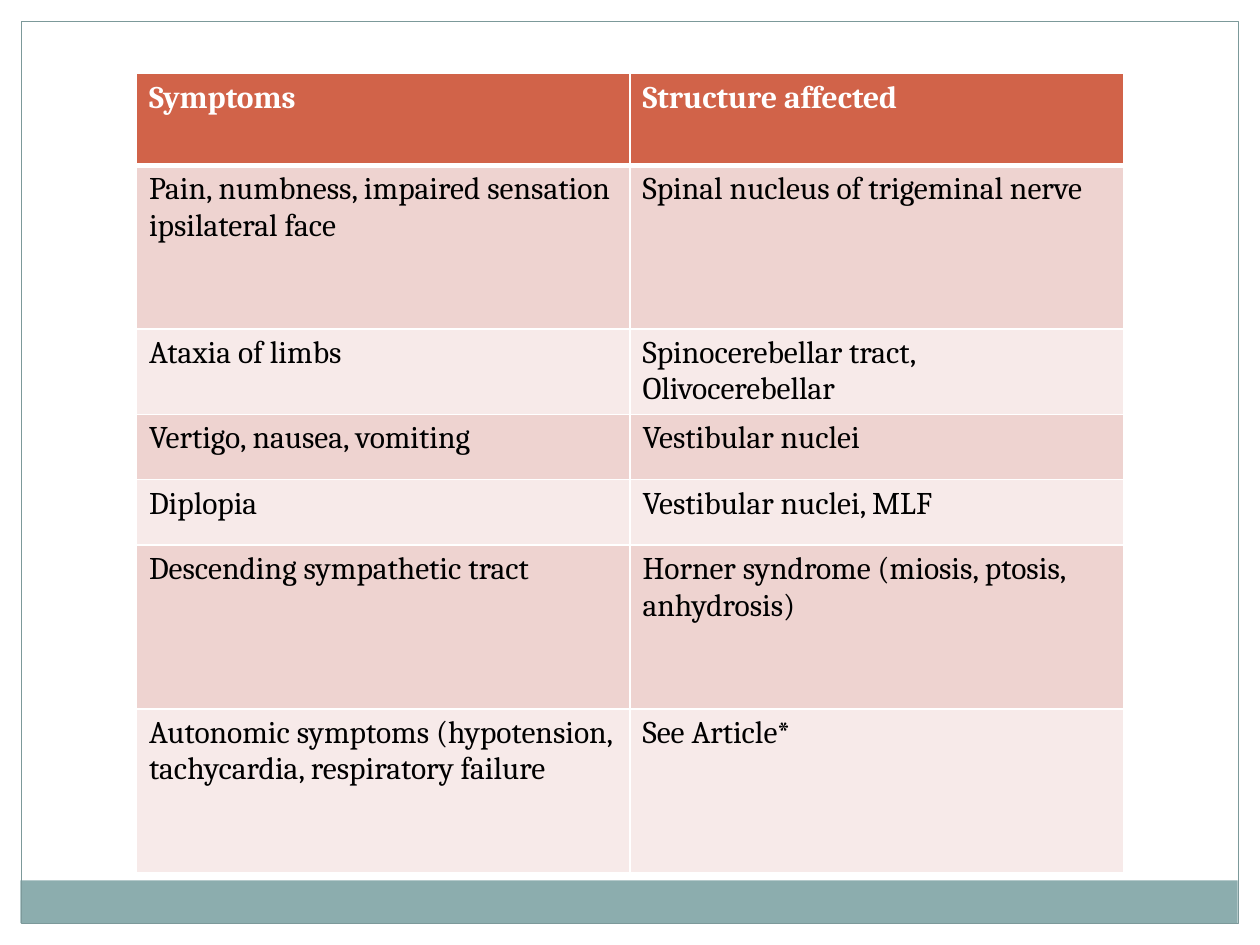
"""Build a slide with a framed table of symptoms and affected structures."""
from typing import NamedTuple

import lxml.etree
import pptx
import pptx.dml.color
import pptx.enum.shapes
import pptx.oxml.ns
import pptx.util

Cm = pptx.util.Cm
Pt = pptx.util.Pt
qn = pptx.oxml.ns.qn

WIDE, HIGH, EDGE = 25.4, 19.05, 0.43


class Box(NamedTuple):
    left: float
    top: float
    width: float
    height: float
    fill: str = ""
    line: str = ""


class Row(NamedTuple):
    height: float
    cells: tuple[str, str]


BOXES = [
    Box(0, 0, WIDE, EDGE, "FFFFFF"),
    Box(WIDE - EDGE, 0, EDGE, HIGH, "FFFFFF"),
    Box(0, 0, EDGE, HIGH, "FFFFFF"),
    Box(0.41, 17.75, 24.54, 0.86, "8CADAE"),
    Box(EDGE, EDGE, 24.54, 18.19, line="7C999A"),
]
ROWS = [
    Row(1.85, ("Symptoms", "Structure affected")),
    Row(3.3, ("Pain, numbness, impaired sensation ipsilateral face",
              "Spinal nucleus of trigeminal nerve")),
    Row(1.32, ("Ataxia of limbs", "Spinocerebellar tract, Olivocerebellar")),
    Row(1.32, ("Vertigo, nausea, vomiting", "Vestibular nuclei")),
    Row(1.32, ("Diplopia", "Vestibular nuclei, MLF")),
    Row(3.3, ("Descending sympathetic tract",
              "Horner syndrome (miosis, ptosis, anhydrosis)")),
    Row(3.3, ("Autonomic symptoms (hypotension, tachycardia, respiratory failure",
              "See Article*")),
]
FONT = {"name": "Cambria", "size": Pt(18)}
BANDS = ("F7EAE9", "EED3D0")


def tint(fill, code: str) -> None:
    fill.solid()
    fill.fore_color.rgb = pptx.dml.color.RGBColor.from_string(code)


def draw_box(slide, box: Box) -> None:
    shape = slide.shapes.add_shape(
        pptx.enum.shapes.MSO_SHAPE.RECTANGLE, *map(Cm, box[:4]))
    shape.shadow.inherit = False
    for fill, code in ((shape.fill, box.fill), (shape.line.fill, box.line)):
        if code:
            tint(fill, code)
        else:
            fill.background()
    if box.line:
        shape.line.width = Pt(0.75)


def rule_cell(cell, row: int) -> None:
    props = cell._tc.get_or_add_tcPr()
    for spot, side in enumerate("LRTB"):
        thick = (row, side) in ((0, "B"), (1, "T"))
        line = lxml.etree.Element(qn(f"a:ln{side}"), w=str(Pt(3 if thick else 1)))
        fill = lxml.etree.SubElement(line, qn("a:solidFill"))
        lxml.etree.SubElement(fill, qn("a:srgbClr"), val="FFFFFF")
        props.insert(spot, line)


def fill_cell(cell, text: str, row: int) -> None:
    head = row == 0
    cell.text = text
    font = cell.text_frame.paragraphs[0].runs[0].font
    for key, value in {**FONT, "bold": head}.items():
        setattr(font, key, value)
    tint(font.fill, "FFFFFF" if head else "000000")
    tint(cell.fill, "D16349" if head else BANDS[row % 2])
    rule_cell(cell, row)


def draw_table(slide, rows: list[Row]) -> None:
    high = sum(row.height for row in rows)
    table = slide.shapes.add_table(
        len(rows), 2, Cm(2.75), Cm(1.48), Cm(19.9), Cm(high)).table
    for num, row in enumerate(rows):
        table.rows[num].height = Cm(row.height)
        for col, text in enumerate(row.cells):
            fill_cell(table.cell(num, col), text, num)


def main() -> None:
    deck = pptx.Presentation()
    deck.slide_width, deck.slide_height = Cm(WIDE), Cm(HIGH)
    slide = deck.slides.add_slide(deck.slide_layouts[6])
    tint(slide.background.fill, "FFFFFF")
    for box in BOXES:
        draw_box(slide, box)
    draw_table(slide, ROWS)
    deck.save("out.pptx")


if __name__ == "__main__":
    main()
